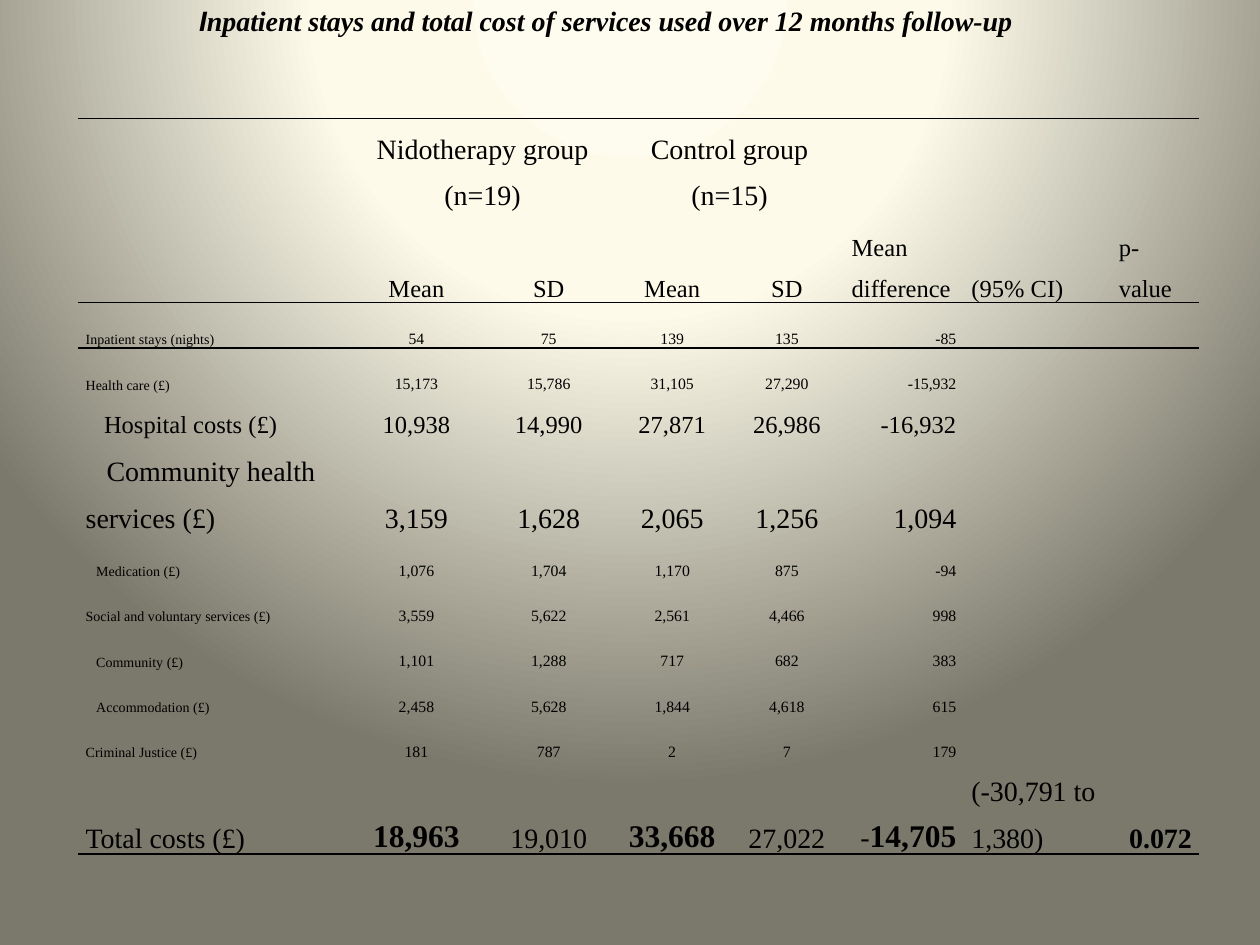
from dataclasses import dataclass
from typing import NamedTuple

from pptx import Presentation
from pptx.dml.color import RGBColor
from pptx.enum.text import MSO_ANCHOR, MSO_AUTO_SIZE, PP_ALIGN as Align
from pptx.oxml import parse_xml
from pptx.oxml.ns import nsdecls, qn
from pptx.util import Inches, Pt


@dataclass(frozen=True)
class Theme:
    ink: str = "000000"
    backdrop: tuple = ((0, "FEFCEE"), (40, "FDFAEA"), (100, "7B796B"))
    serif: str = "Times New Roman"
    sans: str = "Arial"
    tiny: int = 8
    small: int = 9
    medium: int = 14
    large: int = 16
    total: int = 18
    rule: float = 1
    leading: float = 1.5


THEME = Theme()
NO_GRID_STYLE = "{2D5ABB26-0587-4C30-8999-92F81FD0307C}"
COLUMN_WIDTHS = (2.16, 1.05, 1.05, 0.91, 0.91, 0.95, 1.17, 0.7)
ROW_HEIGHT = 0.36
TALL_ROWS = {1: 0.72, 5: 0.76, 11: 0.69}
HEADER_ROW, FIRST_COST_ROW, TOTAL_ROW = 1, 2, 11


class Entry(NamedTuple):
    text: str
    size: int
    align: Align = Align.LEFT
    bold: bool = False
    indented: bool = False
    sign: str = ""


class CostLine(NamedTuple):
    label: str
    values: str
    label_size: int = THEME.tiny
    value_size: int = THEME.small
    indented: bool = False

    def entries(self) -> list[Entry]:
        *statistics, difference = self.values.split()
        return [
            Entry(self.label, self.label_size, indented=self.indented),
            *(Entry(value, self.value_size, Align.CENTER) for value in statistics),
            Entry(difference, self.value_size, Align.RIGHT),
        ]


COST_LINES = (
    CostLine("Inpatient stays (nights)", "54 75 139 135 -85"),
    CostLine("Health care (£)", "15,173 15,786 31,105 27,290 -15,932"),
    CostLine("Hospital costs (£)", "10,938 14,990 27,871 26,986 -16,932",
             THEME.medium, THEME.medium, True),
    CostLine("Community health services (£)", "3,159 1,628 2,065 1,256 1,094",
             THEME.large, THEME.large, True),
    CostLine("Medication (£)", "1,076 1,704 1,170 875 -94", indented=True),
    CostLine("Social and voluntary services (£)", "3,559 5,622 2,561 4,466 998"),
    CostLine("Community (£)", "1,101 1,288 717 682 383", indented=True),
    CostLine("Accommodation (£)", "2,458 5,628 1,844 4,618 615", indented=True),
    CostLine("Criminal Justice (£)", "181 787 2 7 179"),
)
GROUPS = {1: "Nidotherapy group (n=19)", 3: "Control group (n=15)"}
STATISTICS = ("Mean", "SD", "Mean", "SD")
COMPARISONS = ("Mean\ndifference", "(95% CI)", "p-value")
TOTALS = (
    Entry("Total costs (£)", THEME.large),
    Entry("18,963", THEME.total, Align.CENTER, True),
    Entry("19,010", THEME.large, Align.CENTER),
    Entry("33,668", THEME.total, Align.CENTER, True),
    Entry("27,022", THEME.large, Align.CENTER),
    Entry("14,705", THEME.total, Align.RIGHT, True, sign="-"),
    Entry("(-30,791 to 1,380)", THEME.large),
    Entry("0.072", THEME.large, Align.RIGHT, True),
)


def style_run(run, size: float, bold: bool = False, face: str = THEME.serif) -> None:
    run.font.size = Pt(size)
    run.font.bold = bold
    run.font.name = face
    run.font.color.rgb = RGBColor.from_string(THEME.ink)


def paint_background(slide) -> None:
    """Circular gradient centred above the slide."""
    stops = "".join(
        f'<a:gs pos="{position * 1000}"><a:srgbClr val="{colour}"/></a:gs>'
        for position, colour in THEME.backdrop
    )
    slide.element.cSld.insert(0, parse_xml(
        f'<p:bg {nsdecls("p", "a")}><p:bgPr><a:gradFill rotWithShape="0">'
        f'<a:gsLst>{stops}</a:gsLst><a:path path="circle">'
        '<a:fillToRect l="50000" t="-80000" r="50000" b="180000"/></a:path>'
        '</a:gradFill><a:effectLst/></p:bgPr></p:bg>'
    ))


def add_title(slide) -> None:
    title = slide.shapes.title
    title.left, title.top = Inches(1.48), Inches(-0.14)
    title.width, title.height = Inches(7.42), Inches(0.78)
    frame = title.text_frame
    frame.auto_size = MSO_AUTO_SIZE.NONE
    frame.word_wrap = True
    frame.vertical_anchor = MSO_ANCHOR.TOP
    frame.margin_left = frame.margin_right = Inches(0.1)
    frame.margin_top, frame.margin_bottom = Inches(0.17), Inches(0.04)
    heading = frame.paragraphs[0]
    heading.alignment = Align.LEFT
    for words, face in (
        ("I", THEME.sans),
        ("npatient stays and total cost of services used over 12 months follow-up", THEME.serif),
    ):
        run = heading.add_run()
        run.text = words
        style_run(run, THEME.large, True, face)
        run.font.italic = True


def rule_cell(cell, side: str) -> None:
    """Draw a border on side "T" (top) or "B" (bottom); call before filling."""
    cell._tc.get_or_add_tcPr().append(parse_xml(
        f'<a:ln{side} {nsdecls("a")} w="{Pt(THEME.rule)}"><a:solidFill>'
        f'<a:srgbClr val="{THEME.ink}"/></a:solidFill></a:ln{side}>'
    ))


def write_entry(cell, entry: Entry) -> None:
    cell.text_frame.text = entry.text
    for paragraph in cell.text_frame.paragraphs:
        paragraph.alignment = entry.align
        paragraph.line_spacing = THEME.leading
        if entry.indented:
            properties = paragraph._p.get_or_add_pPr()
            properties.set("marL", "0")
            properties.set("indent", str(Pt(0.75 * entry.size)))
        for run in paragraph.runs:
            style_run(run, entry.size, entry.bold)
        if entry.sign:
            amount = paragraph.runs[0]
            amount.text = entry.sign
            style_run(amount, THEME.large)
            figure = paragraph.add_run()
            figure.text = entry.text
            style_run(figure, entry.size, entry.bold)


def add_cost_table(slide) -> None:
    heights = [TALL_ROWS.get(row, ROW_HEIGHT) for row in range(TOTAL_ROW + 1)]
    frame = slide.shapes.add_table(
        len(heights), len(COLUMN_WIDTHS), Inches(0.62), Inches(0.94),
        Inches(sum(COLUMN_WIDTHS)), Inches(sum(heights)),
    )
    table = frame.table
    table.first_row = table.horz_banding = False
    table._tbl.tblPr.find(qn("a:tableStyleId")).text = NO_GRID_STYLE
    for column, width in zip(table.columns, COLUMN_WIDTHS):
        column.width = Inches(width)
    ruled_sides = {0: "T", HEADER_ROW: "B", FIRST_COST_ROW: "T", TOTAL_ROW: "B"}
    for index, (row, height) in enumerate(zip(table.rows, heights)):
        row.height = Inches(height)
        for cell in row.cells:
            cell.margin_left = cell.margin_right = Inches(0.06)
            cell.margin_top = cell.margin_bottom = 0
            cell.vertical_anchor = MSO_ANCHOR.BOTTOM
            if index in ruled_sides:
                rule_cell(cell, ruled_sides[index])
            cell.fill.background()

    for column, group in GROUPS.items():
        table.cell(0, column).merge(table.cell(0, column + 1))
        write_entry(table.cell(0, column), Entry(group, THEME.large, Align.CENTER))
    headings = [Entry(name, THEME.medium, Align.CENTER) for name in STATISTICS]
    headings += [Entry(name, THEME.medium) for name in COMPARISONS]
    for column, heading in enumerate(headings, start=1):
        write_entry(table.cell(HEADER_ROW, column), heading)
    body = [*(line.entries() for line in COST_LINES), TOTALS]
    for row, entries in enumerate(body, start=FIRST_COST_ROW):
        for column, entry in enumerate(entries):
            write_entry(table.cell(row, column), entry)


def main() -> None:
    deck = Presentation()
    deck.slide_width, deck.slide_height = Inches(10), Inches(7.5)
    slide = deck.slides.add_slide(deck.slide_layouts[5])
    paint_background(slide)
    add_cost_table(slide)
    add_title(slide)
    deck.save("out.pptx")


if __name__ == "__main__":
    main()
